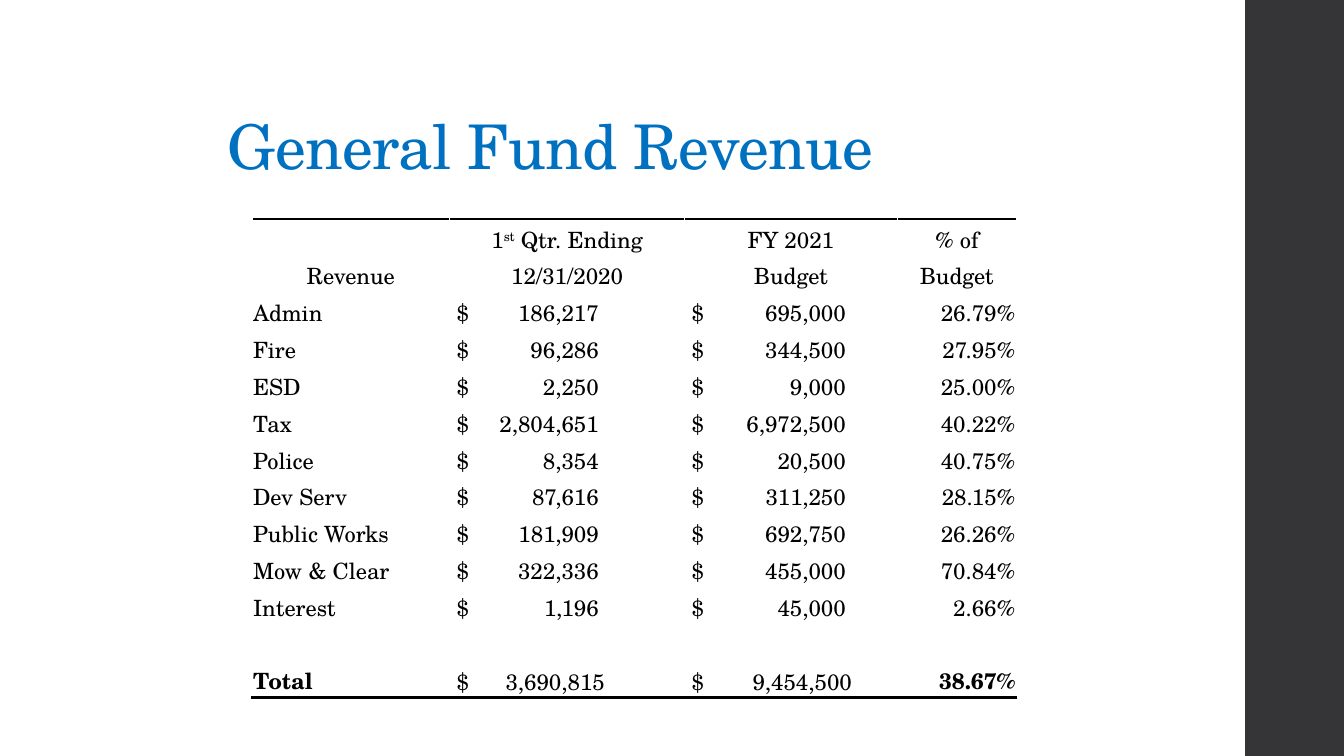
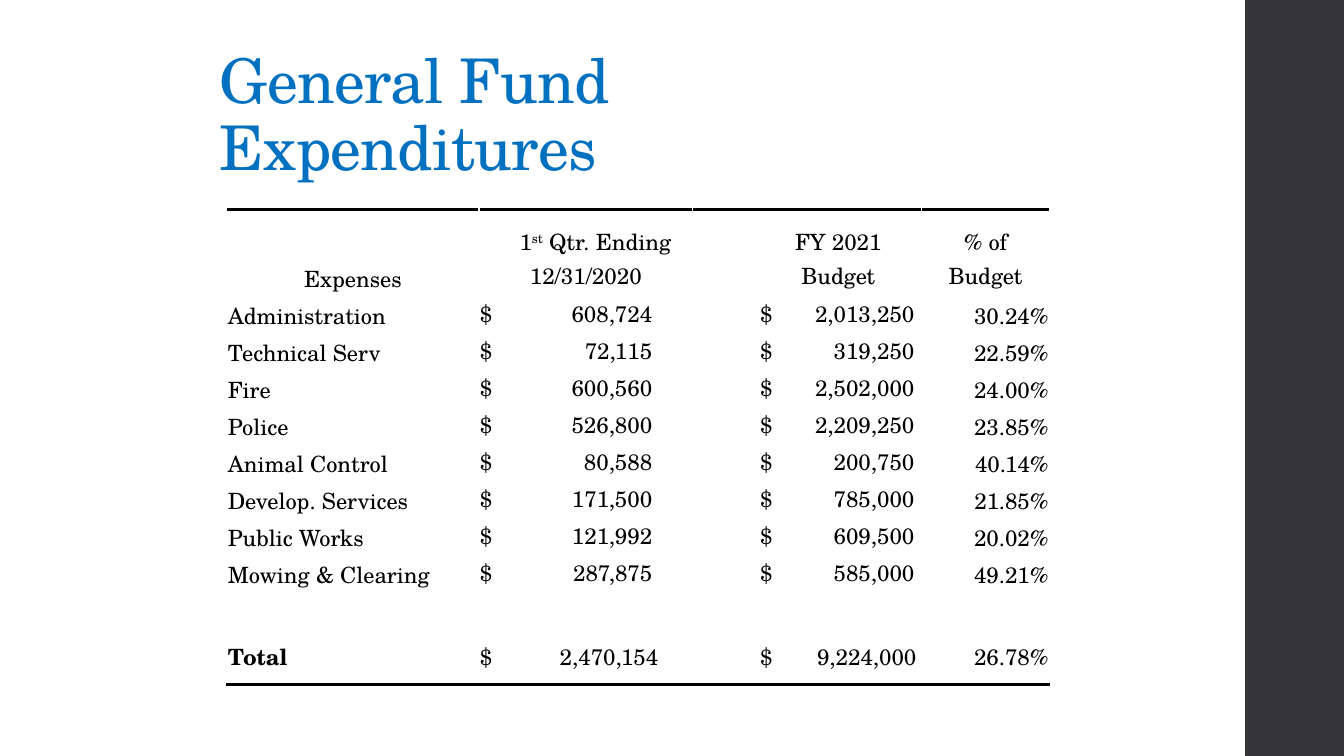
import dataclasses
import typing

import lxml.etree
import pptx
import pptx.dml.color
import pptx.enum.shapes
import pptx.enum.text
import pptx.oxml.ns
import pptx.util

Inches = pptx.util.Inches
Pt = pptx.util.Pt
RGBColor = pptx.dml.color.RGBColor
Align = pptx.enum.text.PP_ALIGN
Anchor = pptx.enum.text.MSO_ANCHOR
qn = pptx.oxml.ns.qn

BLUE = RGBColor(0x00, 0x70, 0xC0)
BLACK = RGBColor(0x00, 0x00, 0x00)
WHITE = RGBColor(0xFF, 0xFF, 0xFF)
DARK = RGBColor(0x35, 0x35, 0x37)
FONT = "TeX Gyre Schola"
INSET = 0.01


@dataclasses.dataclass(frozen=True)
class Column:
    width: float
    pad: float = INSET
    shift: float = INSET
    stop: float = 0
    last: float = 0


@dataclasses.dataclass(frozen=True)
class Sheet:
    title: str
    spot: tuple[float, float, float, float]
    place: tuple[float, float]
    height: float
    label: str
    cols: tuple[Column, ...]
    rows: tuple[tuple[str, ...], ...]
    total: tuple[str, ...]
    strong: tuple[int, ...]
    first: float = 0
    final: float = 0
    head: typing.Any = Anchor.BOTTOM
    money: typing.Any = Anchor.BOTTOM
    foot: typing.Any = Anchor.BOTTOM


SHEETS = (
    Sheet(
        title="General Fund Revenue",
        spot=(2.16, 0.83, 7.95, 1.03),
        place=(2.5, 2.17),
        height=4.75,
        label="Revenue",
        cols=(
            Column(1.96),
            Column(2.33, 0.07, stop=1.48, last=1.54),
            Column(2.11, 0.07, stop=1.6, last=1.66),
            Column(1.18),
        ),
        rows=(
            ("Admin", "186,217", "695,000", "26.79%"),
            ("Fire", "96,286", "344,500", "27.95%"),
            ("ESD", "2,250", "9,000", "25.00%"),
            ("Tax", "2,804,651", "6,972,500", "40.22%"),
            ("Police", "8,354", "20,500", "40.75%"),
            ("Dev Serv", "87,616", "311,250", "28.15%"),
            ("Public Works", "181,909", "692,750", "26.26%"),
            ("Mow & Clear", "322,336", "455,000", "70.84%"),
            ("Interest", "1,196", "45,000", "2.66%"),
        ),
        total=("Total", "3,690,815", "9,454,500", "38.67%"),
        strong=(0, 3),
    ),
    Sheet(
        title="General Fund Expenditures",
        spot=(2.08, 0.92, 7.95, 0.95),
        place=(2.25, 2.08),
        height=4.71,
        label="Expenses",
        cols=(
            Column(2.5),
            Column(2.12, shift=0.2, stop=1.72, last=1.78),
            Column(2.27, 0.67, 0.63, 2.2, 2.22),
            Column(1.27),
        ),
        rows=(
            ("Administration", "608,724", "2,013,250", "30.24%"),
            ("Technical Serv", "72,115", "319,250", "22.59%"),
            ("Fire", "600,560", "2,502,000", "24.00%"),
            ("Police", "526,800", "2,209,250", "23.85%"),
            ("Animal Control", "80,588", "200,750", "40.14%"),
            ("Develop. Services", "171,500", "785,000", "21.85%"),
            ("Public Works", "121,992", "609,500", "20.02%"),
            ("Mowing & Clearing", "287,875", "585,000", "49.21%"),
        ),
        total=("Total", "2,470,154", "9,224,000", "26.78%"),
        strong=(0,),
        first=0.48,
        final=0.56,
        head=Anchor.TOP,
        money=Anchor.MIDDLE,
        foot=Anchor.MIDDLE,
    ),
)


def write(para, text: str, *, size: float = 16, color=BLACK, bold: bool = False,
          align=Align.LEFT, raised: bool = False, space: int = 0) -> None:
    para.alignment = align
    run = para.add_run()
    run.text = text
    run.font.name = FONT
    run.font.size = Pt(size)
    run.font.bold = bold
    run.font.color.rgb = color
    props = run.font._element
    if raised:
        props.set("baseline", "30000")
    if space:
        props.set("spc", str(space))


def rule(cell, side: str) -> None:
    line = lxml.etree.Element(qn(f"a:{side}"), w=str(Pt(2)))
    fill = lxml.etree.SubElement(line, qn("a:solidFill"))
    lxml.etree.SubElement(fill, qn("a:srgbClr"), val=str(BLACK))
    cell._tc.get_or_add_tcPr().insert(0, line)


def set_tab(para, stop: float) -> None:
    tabs = lxml.etree.SubElement(para._p.get_or_add_pPr(), qn("a:tabLst"))
    lxml.etree.SubElement(tabs, qn("a:tab"), pos=str(Inches(stop)), algn="r")


def add_band(slide) -> None:
    band = slide.shapes.add_shape(pptx.enum.shapes.MSO_SHAPE.RECTANGLE,
                                  Inches(12.35), 0, Inches(1), Inches(7.5))
    band.shadow.inherit = False
    band.fill.solid()
    band.fill.fore_color.rgb = DARK
    band.line.fill.background()


def add_title(slide, sheet: Sheet) -> None:
    title = slide.shapes.title
    title.left, title.top, title.width, title.height = map(Inches, sheet.spot)
    frame = title.text_frame
    frame.auto_size = pptx.enum.text.MSO_AUTO_SIZE.NONE
    frame.word_wrap = True
    frame.vertical_anchor = Anchor.BOTTOM
    frame.margin_right = Inches(0.2)
    para = frame.paragraphs[0]
    para.line_spacing = 0.9
    write(para, sheet.title, size=44, color=BLUE, space=-50)


def fill_heads(table, sheet: Sheet) -> None:
    names = (
        ("", "1st", "FY 2021", "% of"),
        (sheet.label, "12/31/2020", "Budget", "Budget"),
    )
    for row, texts in enumerate(names):
        for col, text in enumerate(texts):
            cell = table.cell(row, col)
            if row == 0 or col == 2:
                cell.margin_left = Inches(sheet.cols[col].shift)
            if row == 1 and col > 0:
                cell.vertical_anchor = sheet.head
            para = cell.text_frame.paragraphs[0]
            if text == "1st":
                write(para, "1", align=Align.CENTER)
                write(para, "st", align=Align.CENTER, raised=True)
                write(para, " Qtr. Ending", align=Align.CENTER)
            elif text:
                write(para, text, align=Align.CENTER)


def fill_row(table, sheet: Sheet, row: int, texts: tuple[str, ...],
             total: bool = False) -> None:
    for col, (text, spec) in enumerate(zip(texts, sheet.cols)):
        cell = table.cell(row, col)
        para = cell.text_frame.paragraphs[0]
        bold = total and col in sheet.strong
        if spec.stop:
            cell.margin_left = Inches(spec.pad)
            cell.vertical_anchor = sheet.money
            write(para, f"$\t{text}", bold=bold)
            set_tab(para, (spec.last if total else spec.stop) - spec.pad)
        else:
            write(para, text, bold=bold, align=Align.RIGHT if col else Align.LEFT)
        if total:
            cell.vertical_anchor = sheet.foot


def add_grid(slide, sheet: Sheet) -> None:
    count = len(sheet.rows) + 4
    width = sum(col.width for col in sheet.cols)
    frame = slide.shapes.add_table(count, len(sheet.cols), *map(
        Inches, (*sheet.place, width, sheet.height)))
    table = frame.table
    table.first_row = table.horz_banding = False
    for col, spec in zip(table.columns, sheet.cols):
        col.width = Inches(spec.width)
    fixed = [tall for tall in (sheet.first, sheet.final) if tall]
    step = (sheet.height - sum(fixed)) / (count - len(fixed))
    for row in table.rows:
        row.height = Inches(step)
    table.rows[0].height = Inches(sheet.first or step)
    table.rows[count - 1].height = Inches(sheet.final or step)
    for cell in table.iter_cells():
        cell.margin_left = cell.margin_right = cell.margin_top = Inches(INSET)
        cell.margin_bottom = 0
        cell.vertical_anchor = Anchor.BOTTOM
        cell.fill.solid()
        cell.fill.fore_color.rgb = WHITE
    for col in range(len(sheet.cols)):
        rule(table.cell(0, col), "lnT")
        rule(table.cell(count - 1, col), "lnB")
    fill_heads(table, sheet)
    for row, texts in enumerate(sheet.rows, 2):
        fill_row(table, sheet, row, texts)
    fill_row(table, sheet, count - 1, sheet.total, total=True)


def main() -> None:
    deck = pptx.Presentation()
    deck.slide_width = Inches(13.33)
    deck.slide_height = Inches(7.5)
    for sheet in SHEETS:
        slide = deck.slides.add_slide(deck.slide_layouts[5])
        add_band(slide)
        add_title(slide, sheet)
        add_grid(slide, sheet)
    deck.save("out.pptx")


if __name__ == "__main__":
    main()
